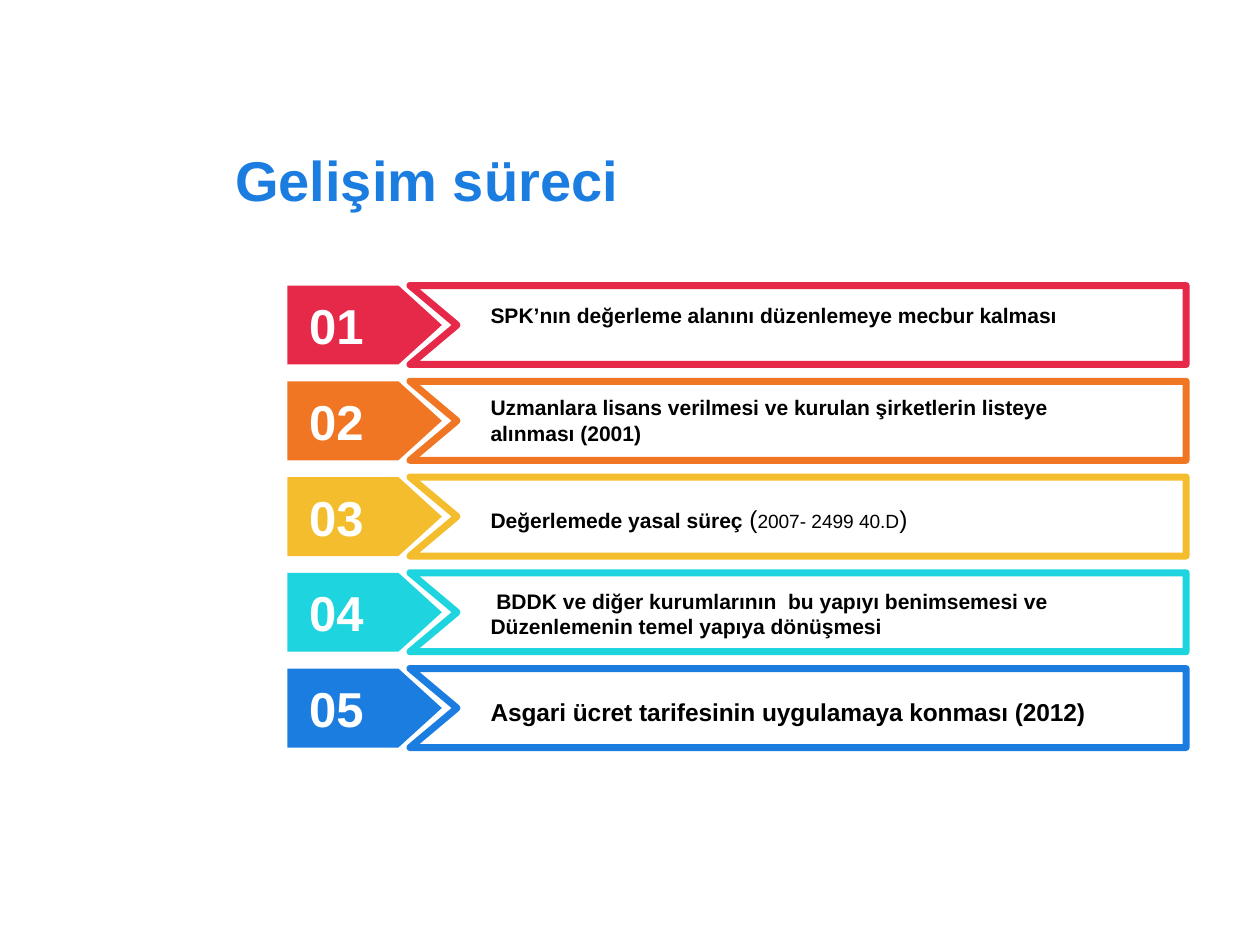
"""Build the slide with the five numbered steps of the development process."""
import lxml.etree
import pptx
import pptx.dml.color
import pptx.enum.shapes
import pptx.enum.text
import pptx.oxml.ns
import pptx.util

Inches = pptx.util.Inches
ANCHOR = pptx.enum.text.MSO_ANCHOR
ALIGN = pptx.enum.text.PP_ALIGN

COLORS = {
    "red": "E62949", "orange": "F07624", "yellow": "F4BD2D",
    "cyan": "1ED4DE", "blue": "1C7DE1", "white": "FFFFFF", "black": "000000",
}
BOLD = {"size": 9, "bold": True}
LARGE_BOLD = {"size": 10.5, "bold": True}
LARGE = {"size": 10.5, "bold": False}
SMALL = {"size": 8.2, "bold": False}
TITLE_STYLE = {"size": 24, "bold": True, "color": "blue"}
NUMBER_STYLE = {"size": 21, "bold": True, "color": "white"}

TITLE = "Gelişim süreci"
STEPS = [
    {"color": "red", "text_top": 0.06, "align": ALIGN.LEFT,
     "spans": [("SPK’nın değerleme alanını düzenlemeye mecbur kalması", BOLD)]},
    {"color": "orange", "text_top": 0.04, "align": ALIGN.LEFT,
     "spans": [("Uzmanlara lisans verilmesi ve kurulan şirketlerin listeye alınması (2001)", BOLD)]},
    {"color": "yellow", "text_top": 0.12, "align": ALIGN.JUSTIFY,
     "spans": [("Değerlemede yasal süreç", BOLD), (" ", LARGE_BOLD), ("(", LARGE),
               ("2007- 2499 40.D", SMALL), (")", LARGE)]},
    {"color": "cyan", "text_top": 0.05, "align": ALIGN.LEFT,
     "spans": [(" BDDK ve diğer kurumlarının  bu yapıyı benimsemesi ve "
                "Düzenlemenin temel yapıya dönüşmesi", BOLD)]},
    {"color": "blue", "text_top": 0.13, "align": ALIGN.LEFT,
     "spans": [("Asgari ücret tarifesinin uygulamaya konması (2012)", LARGE_BOLD)]},
]

PAGE_WIDTH = 7.5
PAGE_HEIGHT = PAGE_WIDTH * 3 / 4
FIRST_TOP, LAST_TOP, HEIGHT = 1.7, 3.98, 0.47
PITCH = (LAST_TOP - FIRST_TOP) / (len(STEPS) - 1)
TAG_LEFT, TAG_WIDTH = 1.71, 0.92
FRAME_LEFT, NOTCH, FRAME_RIGHT = 2.44, 2.72, 7.06


def rgb(name):
    return pptx.dml.color.RGBColor.from_string(COLORS[name])


def write(box, spans, align=ALIGN.LEFT, anchor=ANCHOR.TOP, inset=0.04):
    frame = box.text_frame
    settings = {
        "word_wrap": True, "auto_size": pptx.enum.text.MSO_AUTO_SIZE.NONE,
        "vertical_anchor": anchor,
        "margin_left": Inches(0.07), "margin_right": Inches(0.07),
        "margin_top": Inches(inset), "margin_bottom": Inches(inset),
    }
    for name, value in settings.items():
        setattr(frame, name, value)
    para = frame.paragraphs[0]
    para.alignment = align
    for text, style in spans:
        span = para.add_run()
        span.text = text
        values = {"name": "Arial", "size": pptx.util.Pt(style["size"]), "bold": style["bold"]}
        for name, value in values.items():
            setattr(span.font, name, value)
        span.font.color.rgb = rgb(style.get("color", "black"))


def add_text(page, left, top, width, height, spans, **layout):
    box = page.shapes.add_textbox(*map(Inches, (left, top, width, height)))
    write(box, spans, **layout)


def add_tag(page, top, color):
    tag = page.shapes.add_shape(
        pptx.enum.shapes.MSO_SHAPE.PENTAGON,
        *map(Inches, (TAG_LEFT, top, TAG_WIDTH, HEIGHT)))
    tag.adjustments[0] = 0.55
    tag.shadow.inherit = False
    tag.fill.solid()
    tag.fill.fore_color.rgb = rgb(color)
    tag.line.fill.background()


def add_frame(page, top, color):
    bottom = top + HEIGHT
    corners = [(FRAME_RIGHT, top), (FRAME_RIGHT, bottom),
               (FRAME_LEFT, bottom), (NOTCH, top + HEIGHT / 2)]
    builder = page.shapes.build_freeform(Inches(FRAME_LEFT), Inches(top))
    builder.add_line_segments([(Inches(x), Inches(y)) for x, y in corners], close=True)
    outline = builder.convert_to_shape()
    outline.shadow.inherit = False
    outline.fill.solid()
    outline.fill.fore_color.rgb = rgb("white")
    outline.line.color.rgb = rgb(color)
    outline.line.width = pptx.util.Pt(3)
    line = outline.element.spPr.find(pptx.oxml.ns.qn("a:ln"))
    lxml.etree.SubElement(line, pptx.oxml.ns.qn("a:round"))


def main():
    deck = pptx.Presentation()
    deck.slide_width, deck.slide_height = Inches(PAGE_WIDTH), Inches(PAGE_HEIGHT)
    page = deck.slides.add_slide(deck.slide_layouts[5])
    title = page.shapes.title
    title.left, title.top, title.width, title.height = map(Inches, (1.33, 0.7, 6.17, 0.73))
    write(title, [(TITLE, TITLE_STYLE)], anchor=ANCHOR.MIDDLE)

    for index, step in enumerate(STEPS):
        top = FIRST_TOP + index * PITCH
        add_tag(page, top, step["color"])
        add_frame(page, top, step["color"])
        add_text(page, 1.77, top + 0.06, 0.5, 0.35, [(f"{index + 1:02}", NUMBER_STYLE)],
                 anchor=ANCHOR.MIDDLE, inset=0)
        add_text(page, 2.85, top + step["text_top"], 3.97, 0.35, step["spans"],
                 align=step["align"])
    deck.save("out.pptx")


if __name__ == "__main__":
    main()
